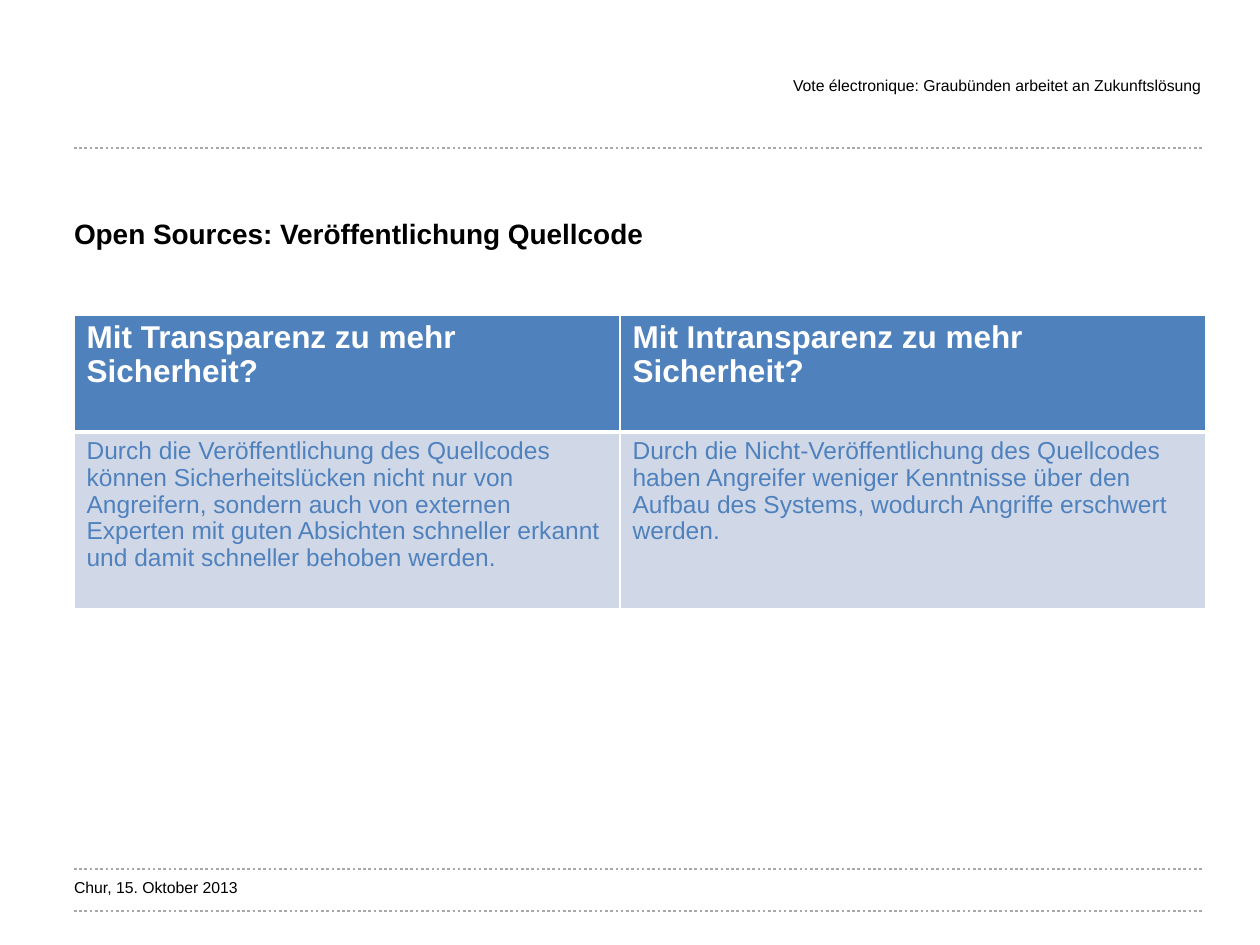
from dataclasses import dataclass

from lxml.etree import SubElement
from pptx import Presentation
from pptx.dml.color import RGBColor
from pptx.enum.dml import MSO_LINE
from pptx.enum.shapes import MSO_CONNECTOR
from pptx.enum.text import MSO_ANCHOR, MSO_AUTO_SIZE, PP_ALIGN
from pptx.oxml import parse_xml
from pptx.oxml.ns import nsdecls, qn
from pptx.util import Emu, Pt


@dataclass(frozen=True)
class Theme:
    font: str = "Arial"
    black: str = "000000"
    white: str = "FFFFFF"
    rule: str = "A7A8AA"
    accent: str = "4F81BD"
    pale: str = "D0D8E8"
    small: int = 9
    body: int = 14
    title: int = 16
    table_head: int = 18


THEME = Theme()
LEFT, RIGHT = 74, 1202
COLUMN_WIDTHS = (546, 586)
ROW_HEIGHTS = (117, 177)
TABLE_TEXT = (
    ("Mit Transparenz zu mehr Sicherheit?",
     "Mit Intransparenz zu mehr Sicherheit?"),
    ("Durch die Veröffentlichung des Quellcodes können Sicherheitslücken "
     "nicht nur von Angreifern, sondern auch von externen Experten mit guten "
     "Absichten schneller erkannt und damit schneller behoben werden.",
     "Durch die Nicht-Veröffentlichung des Quellcodes haben Angreifer weniger "
     "Kenntnisse über den Aufbau des Systems, wodurch Angriffe erschwert werden."),
)


def px(length):
    """Turn pixels (126 to the inch) into EMU."""
    return Emu(round(length * 914400 / 126))


def color(code):
    return RGBColor.from_string(code)


def write(paragraph, text, size, code, bold=False, align=PP_ALIGN.LEFT):
    paragraph.alignment = align
    run = paragraph.add_run()
    run.text = text
    run.font.name = THEME.font
    run.font.size = Pt(size)
    run.font.bold = bold
    run.font.color.rgb = color(code)


def fill_text_shape(shape, box, text, size, **style):
    """Place a text shape and give it one plain, unbulleted paragraph."""
    shape.left, shape.top, shape.width, shape.height = map(px, box)
    frame = shape.text_frame
    frame.margin_left = frame.margin_top = frame.margin_right = frame.margin_bottom = 0
    frame.word_wrap = True
    frame.auto_size = MSO_AUTO_SIZE.NONE
    frame.vertical_anchor = MSO_ANCHOR.TOP
    paragraph = frame.paragraphs[0]
    properties = paragraph._p.get_or_add_pPr()
    properties.set("marL", "0")
    properties.set("indent", "0")
    SubElement(properties, qn("a:buNone"))
    paragraph.space_before = Pt(0)
    write(paragraph, text, size, THEME.black, **style)


def add_dotted_rule(slide, y):
    rule = slide.shapes.add_connector(
        MSO_CONNECTOR.STRAIGHT, px(LEFT), px(y), px(RIGHT), px(y))
    rule.line.color.rgb = color(THEME.rule)
    rule.line.width = Pt(1.5)
    rule.line.dash_style = MSO_LINE.ROUND_DOT
    SubElement(rule._element.spPr, qn("a:effectLst"))


def set_borders(cell, top, bottom):
    """Draw white cell borders; the side borders are 1 pt wide."""
    widths = {"lnL": 1, "lnR": 1, "lnT": top, "lnB": bottom}
    properties = cell._tc.get_or_add_tcPr()
    for position, (tag, width) in enumerate(widths.items()):
        properties.insert(position, parse_xml(
            f'<a:{tag} {nsdecls("a")} w="{Pt(width)}"><a:solidFill>'
            f'<a:srgbClr val="{THEME.white}"/></a:solidFill></a:{tag}>'))


def add_comparison_table(slide, x, y):
    table = slide.shapes.add_table(
        len(ROW_HEIGHTS), len(COLUMN_WIDTHS), px(x), px(y),
        px(sum(COLUMN_WIDTHS)), px(sum(ROW_HEIGHTS))).table
    for column, width in zip(table.columns, COLUMN_WIDTHS):
        column.width = px(width)
    # Fill, text size, text colour, bold, top and bottom border of each row
    styles = (
        (THEME.accent, THEME.table_head, THEME.white, True, 1, 3),
        (THEME.pale, THEME.body, THEME.accent, False, 3, 1),
    )
    for row, height, texts, style in zip(table.rows, ROW_HEIGHTS, TABLE_TEXT, styles):
        background, size, code, bold, top, bottom = style
        row.height = px(height)
        for cell, text in zip(row.cells, texts):
            cell.fill.solid()
            cell.fill.fore_color.rgb = color(background)
            set_borders(cell, top, bottom)
            paragraph = cell.text_frame.paragraphs[0]
            paragraph.line_spacing = 0.97
            write(paragraph, text, size, code, bold)


def main():
    presentation = Presentation()
    presentation.slide_width, presentation.slide_height = px(1260), px(945)
    slide = presentation.slides.add_slide(presentation.slide_layouts[1])

    # Footer date and dotted rules
    date = slide.shapes.add_textbox(0, 0, 0, 0)
    fill_text_shape(date, (LEFT, 878, 446, 19), "Chur, 15. Oktober 2013", THEME.small)
    for y in (148, 869, 911):
        add_dotted_rule(slide, y)

    # Running header and title
    fill_text_shape(slide.placeholders[1], (630, 76, 571, 55),
                    "Vote électronique: Graubünden arbeitet an Zukunftslösung",
                    THEME.small, align=PP_ALIGN.RIGHT)
    fill_text_shape(slide.shapes.title, (LEFT, 217, RIGHT - LEFT, 49),
                    "Open Sources: Veröffentlichung Quellcode", THEME.title, bold=True)

    # Comparison
    add_comparison_table(slide, LEFT, 315)

    presentation.save("out.pptx")


if __name__ == "__main__":
    main()
